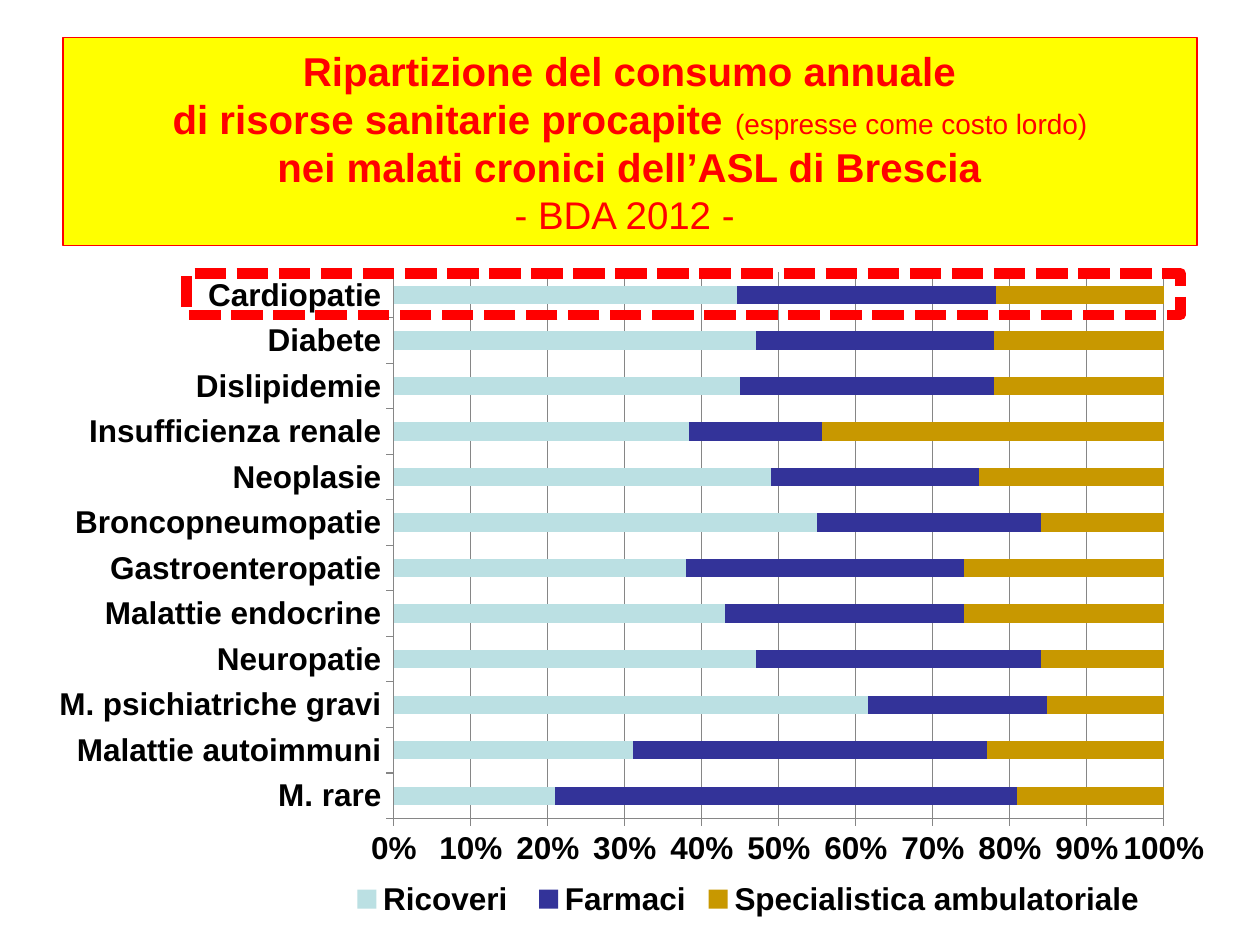
from lxml import etree
from pptx import Presentation
from pptx.chart.data import CategoryChartData
from pptx.dml.color import RGBColor
from pptx.enum.chart import XL_CHART_TYPE as ChartType, XL_LEGEND_POSITION as LegendPosition
from pptx.enum.chart import XL_TICK_MARK as TickMark
from pptx.enum.dml import MSO_LINE_DASH_STYLE as DashStyle
from pptx.enum.shapes import MSO_SHAPE as ShapeType
from pptx.enum.text import MSO_ANCHOR as Anchor, MSO_AUTO_SIZE as AutoSize, PP_ALIGN as Align
from pptx.oxml.ns import qn
from pptx.util import Cm, Pt

FONT = "Arial"
COLORS = {
    "red": "FF0000", "yellow": "FFFF00", "black": "000000", "grid": "868686",
    "hospital": "BBE0E3", "drugs": "333399", "outpatient": "C89800",
}

# Lines of the title, each made of (text, size, bold) pieces
TITLE_LINES = [
    [("Ripartizione del consumo annuale", 23, True)],
    [("di risorse sanitarie procapite ", 23, True), ("(espresse come costo lordo)", 16, False)],
    [("nei malati cronici dell’ASL di Brescia", 23, True)],
    [("- BDA 2012 - ", 22, False)],
]
SERIES = [
    ("Ricoveri ", "hospital"),
    ("Farmaci", "drugs"),
    ("Specialistica ambulatoriale", "outpatient"),
]
# Percentages in the order of SERIES, from the bottom bar to the top one
DISEASES = [
    ("M. rare", 21, 60, 19),
    ("Malattie autoimmuni", 31, 46, 23),
    ("M. psichiatriche gravi", 61, 23, 15),
    ("Neuropatie", 47, 37, 16),
    ("Malattie endocrine", 43, 31, 26),
    ("Gastroenteropatie", 38, 36, 26),
    ("Broncopneumopatie", 55, 29, 16),
    ("Neoplasie", 49, 27, 24),
    ("Insufficienza renale", 38, 17, 44),
    ("Dislipidemie", 45, 33, 22),
    ("Diabete", 47, 31, 22),
    ("Cardiopatie", 45, 34, 22),
]
# Left, top, width and height in centimetres
TITLE_BOX = (1.27, 0.76, 22.86, 4.19)
CHART_BOX = (1.04, 4.5, 24.64, 14.12)
HIGHLIGHT_BOX = (3.76, 5.51, 20.04, 0.84)
# Left, top, width and height as fractions of the chart
PLOT_LAYOUT = (0.28, 0.07, 0.63, 0.78)
LEGEND_LAYOUT = (0.24, 0.93, 0.66, 0.07)


def color(name):
    return RGBColor.from_string(COLORS[name])


def lengths(box):
    return [Cm(value) for value in box]


def format_font(font, *, size, bold, color_name):
    font.name = FONT
    font.size = Pt(size)
    font.bold = bold
    font.color.rgb = color(color_name)


def format_line(line, *, width, color_name):
    line.color.rgb = color(color_name)
    line.width = Pt(width)


def set_layout(element, position, box, inner=False):
    """Place a chart part by hand; position is the index of its layout child."""
    for old in element.findall(qn("c:layout")):
        element.remove(old)
    layout = etree.Element(qn("c:layout"))
    manual = etree.SubElement(layout, qn("c:manualLayout"))
    settings = [("layoutTarget", "inner")] if inner else []
    settings += [("xMode", "edge"), ("yMode", "edge"), *zip("xywh", box)]
    for tag, value in settings:
        etree.SubElement(manual, qn(f"c:{tag}")).set("val", str(value))
    element.insert(position, layout)


def add_title(slide):
    title = slide.shapes.title
    title.left, title.top, title.width, title.height = lengths(TITLE_BOX)
    title.fill.solid()
    title.fill.fore_color.rgb = color("yellow")
    format_line(title.line, width=0.75, color_name="red")
    frame = title.text_frame
    frame.word_wrap = True
    frame.auto_size = AutoSize.NONE
    frame.vertical_anchor = Anchor.MIDDLE
    paragraph = frame.paragraphs[0]
    paragraph.alignment = Align.CENTER
    for index, pieces in enumerate(TITLE_LINES):
        if index:
            paragraph.add_line_break()
        for text, size, bold in pieces:
            run = paragraph.add_run()
            run.text = text
            format_font(run.font, size=size, bold=bold, color_name="red")


def add_cost_chart(slide):
    names, *columns = zip(*DISEASES)
    data = CategoryChartData()
    data.categories = names
    for (name, _), values in zip(SERIES, columns):
        data.add_series(name, values)
    chart = slide.shapes.add_chart(ChartType.BAR_STACKED_100, *lengths(CHART_BOX), data).chart
    format_font(chart.font, size=18, bold=True, color_name="black")
    chart.has_title = False

    plot = chart.plots[0]
    plot.gap_width = 150
    plot.overlap = 100
    plot.vary_by_categories = False
    for series, (_, color_name) in zip(plot.series, SERIES):
        series.format.fill.solid()
        series.format.fill.fore_color.rgb = color(color_name)

    for axis in (chart.category_axis, chart.value_axis):
        axis.major_tick_mark = TickMark.OUTSIDE
        axis.minor_tick_mark = TickMark.NONE
        format_line(axis.format.line, width=0.75, color_name="grid")
    value_axis = chart.value_axis
    value_axis.minimum_scale, value_axis.maximum_scale = 0, 1
    value_axis.major_unit = 0.1
    value_axis.has_major_gridlines = True
    format_line(value_axis.major_gridlines.format.line, width=0.75, color_name="grid")
    value_axis.tick_labels.number_format = "0%"
    value_axis.tick_labels.number_format_is_linked = False

    chart.has_legend = True
    legend = chart.legend
    legend.position = LegendPosition.BOTTOM
    legend.include_in_layout = False
    plot_area = chart.element.find(".//" + qn("c:plotArea"))
    legend_element = chart.element.find(".//" + qn("c:legend"))
    set_layout(plot_area, 0, PLOT_LAYOUT, inner=True)
    set_layout(legend_element, 1, LEGEND_LAYOUT)


def add_highlight(slide):
    highlight = slide.shapes.add_shape(ShapeType.RECTANGLE, *lengths(HIGHLIGHT_BOX))
    highlight.shadow.inherit = False
    highlight.fill.background()
    format_line(highlight.line, width=6, color_name="red")
    highlight.line.dash_style = DashStyle.SQUARE_DOT


def main():
    presentation = Presentation()
    presentation.slide_width, presentation.slide_height = Cm(25.4), Cm(19.05)
    slide = presentation.slides.add_slide(presentation.slide_layouts[5])
    add_title(slide)
    add_cost_chart(slide)
    add_highlight(slide)
    presentation.save("out.pptx")


if __name__ == "__main__":
    main()
